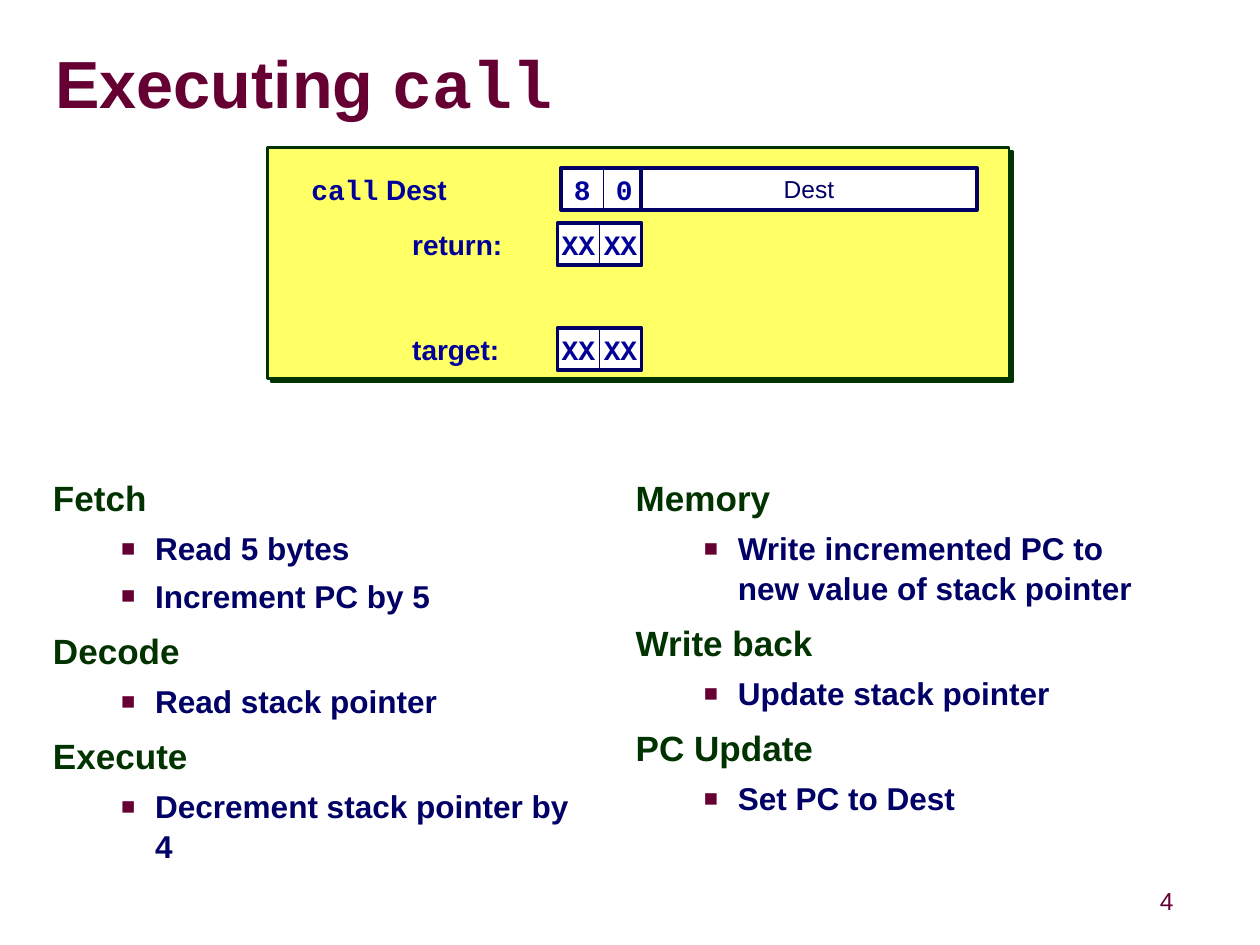
import pptx
import pptx.oxml
import pptx.util
from lxml import etree
from pptx.dml.color import RGBColor
from pptx.enum.shapes import MSO_SHAPE
from pptx.enum.text import MSO_ANCHOR, MSO_AUTO_SIZE, PP_ALIGN
from pptx.oxml.ns import nsdecls, qn
from pptx.util import Inches, Pt

MAROON = RGBColor(0x66, 0x00, 0x33)
GREEN = RGBColor(0x00, 0x33, 0x00)
NAVY = RGBColor(0x00, 0x00, 0x66)
BLUE = RGBColor(0x00, 0x00, 0x99)
YELLOW = RGBColor(0xFF, 0xFF, 0x66)
WHITE = RGBColor(0xFF, 0xFF, 0xFF)
SANS, MONO = "Arial", "Courier New"
CELL = 1 / 3


def style_font(font, name, size, color, bold=True):
    font.name, font.size, font.bold = name, Pt(size), bold
    font.color.rgb = color


def add_box(shapes, left, top, width, height, fill, line, weight):
    """Add an outlined rectangle with no shadow; fill None leaves it hollow."""
    box = shapes.add_shape(MSO_SHAPE.RECTANGLE, Inches(left), Inches(top),
                           Inches(width), Inches(height))
    box.shadow.inherit = False
    if fill is None:
        box.fill.background()
    else:
        box.fill.solid()
        box.fill.fore_color.rgb = fill
    box.line.color.rgb = line
    box.line.width = Pt(weight)
    frame = box.text_frame
    frame.margin_left = frame.margin_right = 0
    frame.vertical_anchor = MSO_ANCHOR.MIDDLE
    frame.paragraphs[0].alignment = PP_ALIGN.CENTER
    return box


deck = pptx.Presentation()
deck.slide_width, deck.slide_height = Inches(9.99), Inches(7.49)
page = deck.slides.add_slide(deck.slide_layouts.get_by_name("Two Content"))

# Title
title = page.shapes.title
title.left, title.top = Inches(0.44), Inches(0.27)
title.width, title.height = Inches(9.52), Inches(0.85)
frame = title.text_frame
frame.auto_size = MSO_AUTO_SIZE.NONE
frame.vertical_anchor = MSO_ANCHOR.MIDDLE
frame.margin_left = frame.margin_right = frame.margin_top = frame.margin_bottom = 0
para = frame.paragraphs[0]
para.alignment = PP_ALIGN.LEFT
para.line_spacing = 0.87
for text, name in (("Executing ", SANS), ("call", MONO)):
    span = para.add_run()
    span.text = text
    style_font(span.font, name, 38, MAROON)

# Stages of the instruction, in two columns
columns = [
    (0.32, [("Fetch", ["Read 5 bytes", "Increment PC by 5"]),
            ("Decode", ["Read stack pointer"]),
            ("Execute", ["Decrement stack pointer by 4"])]),
    (4.94, [("Memory", ["Write incremented PC to new value of stack pointer"]),
            ("Write back", ["Update stack pointer"]),
            ("PC Update", ["Set PC to Dest"])]),
]
for index, (left, stages) in enumerate(columns, start=1):
    body = page.placeholders[index]
    body.left, body.top = Inches(left), Inches(3.75)
    body.width, body.height = Inches(4.45), Inches(3.28)
    frame = body.text_frame
    frame.auto_size = MSO_AUTO_SIZE.NONE
    lines = [(text, level) for heading, steps in stages
             for text, level in [(heading, 0)] + [(step, 1) for step in steps]]
    for number, (text, level) in enumerate(lines):
        para = frame.paragraphs[0] if number == 0 else frame.add_paragraph()
        para.text = text
        para.level = level
        props = para._p.get_or_add_pPr()
        if level == 0:
            style_font(para.font, SANS, 20, GREEN)
            para.line_spacing, para.space_before = 0.95, Pt(10)
            margin, indent = 0, 0
            bullet = ["<a:buNone %s/>"]
        else:
            style_font(para.font, SANS, 18, NAVY)
            para.line_spacing, para.space_before = 1.05, Pt(4.5)
            margin, indent = 0.81, -0.27
            bullet = [f'<a:buClr %s><a:srgbClr val="{MAROON}"/></a:buClr>',
                      '<a:buSzPct %s val="75000"/>',
                      f'<a:buFont %s typeface="{SANS}"/>',
                      '<a:buChar %s char="■"/>']
        props.set("marL", str(Inches(margin)))
        props.set("indent", str(Inches(indent)))
        for position, item in enumerate(bullet, start=2):
            props.insert(position, pptx.oxml.parse_xml(item % nsdecls("a")))

# Instruction encoding
encoding = page.shapes.add_group_shape().shapes
panel = add_box(encoding, 2.12, 1.17, 5.88, 1.83, YELLOW, GREEN, 1.5)
effects = panel._element.spPr.find(qn("a:effectLst"))
shadow = etree.SubElement(effects, qn("a:outerShdw"), dist=str(Pt(2.8)),
                          dir="2700000", algn="ctr", rotWithShape="0")
etree.SubElement(shadow, qn("a:srgbClr"), val=str(GREEN))

rows = [
    (1.33, 2.37, 2.08, [("call", MONO), (" Dest", SANS)], 4.45, ["8", "0"]),
    (1.77, 3.17, 1.22, [("return:", SANS)], 4.42, ["XX", "XX"]),
    (2.6, 3.17, 1.22, [("target:", SANS)], 4.42, ["XX", "XX"]),
]
for top, label_left, label_width, spans, cell_left, values in rows:
    label = encoding.add_textbox(Inches(label_left), Inches(top),
                                 Inches(label_width), Inches(CELL))
    label.text_frame.word_wrap = True
    label.text_frame.vertical_anchor = MSO_ANCHOR.MIDDLE
    for text, name in spans:
        span = label.text_frame.paragraphs[0].add_run()
        span.text = text
        style_font(span.font, name, 16, BLUE)
    for column, value in enumerate(values):
        cell = add_box(encoding, cell_left + column * CELL, top, CELL, CELL,
                       WHITE, NAVY, 0.5)
        para = cell.text_frame.paragraphs[0]
        para.text = value
        style_font(para.font, MONO, 16, BLUE)
    add_box(encoding, cell_left, top, 2 * CELL, CELL, None, NAVY, 2.25)

operand = add_box(encoding, 5.08, 1.33, 8 * CELL, CELL, WHITE, NAVY, 2.25)
para = operand.text_frame.paragraphs[0]
para.text = "Dest"
style_font(para.font, SANS, 14, NAVY, bold=False)

# Page number
page_number = page.shapes.add_textbox(Inches(9.08), Inches(7), Inches(0.34), Inches(0.31))
frame = page_number.text_frame
frame.word_wrap = True
frame.vertical_anchor = MSO_ANCHOR.MIDDLE
frame.margin_left = frame.margin_right = Inches(0.05)
para = frame.paragraphs[0]
para.text = "4"
para.alignment = PP_ALIGN.CENTER
para.line_spacing = 0.9
style_font(para.font, SANS, 14, MAROON, bold=False)

deck.save("out.pptx")
